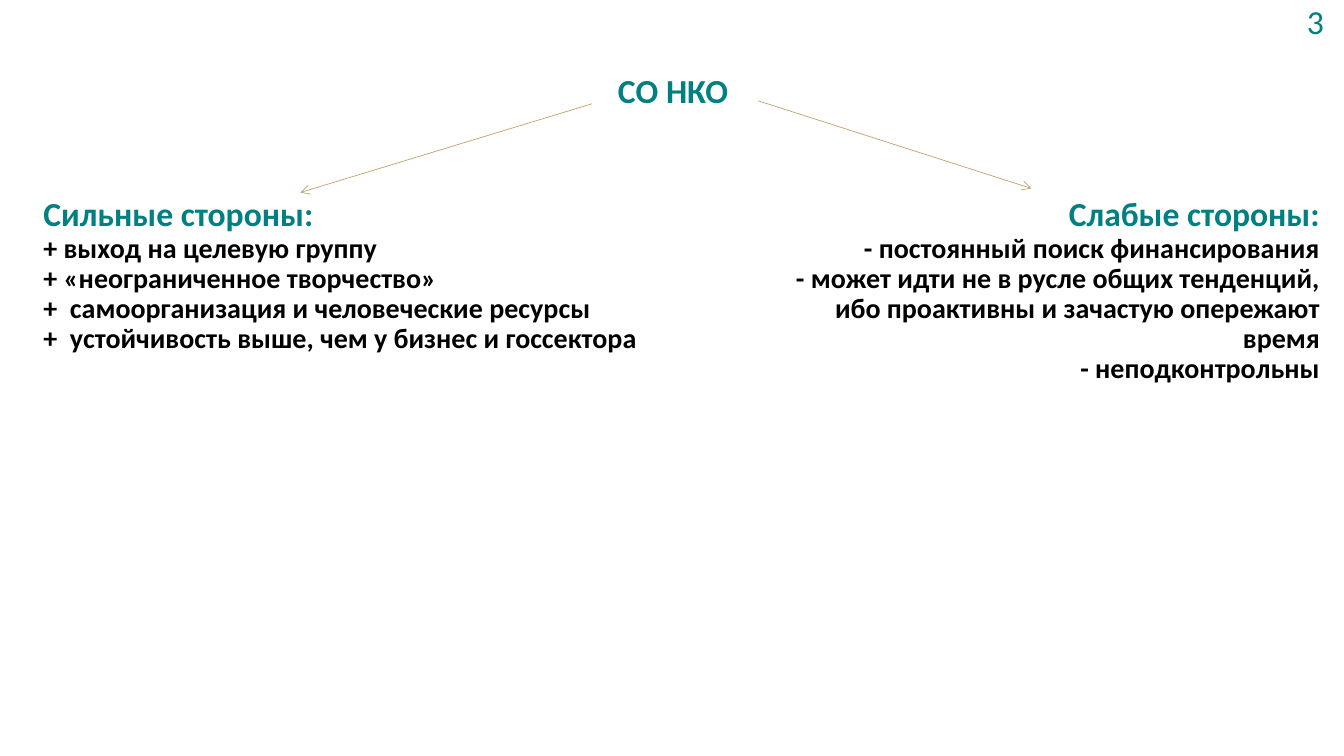
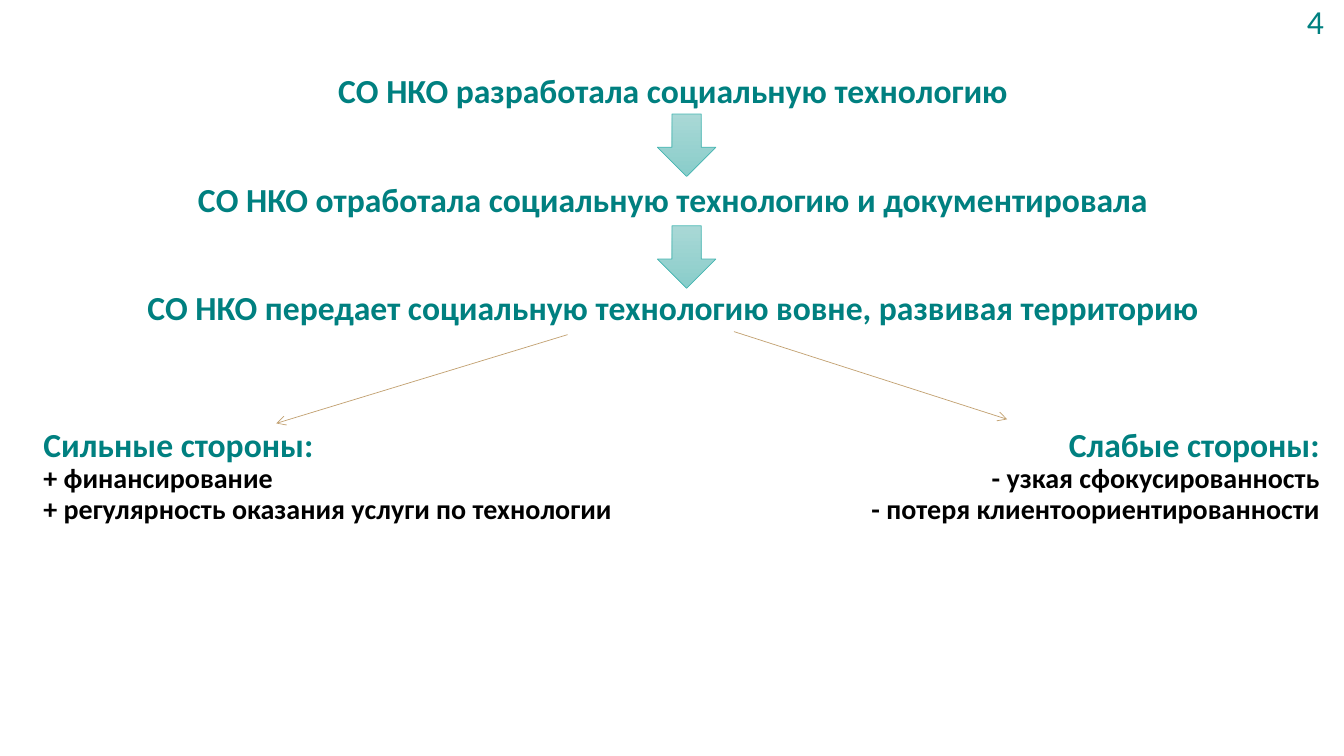
from lxml import etree
from pptx import Presentation
from pptx import util as u
from pptx.dml import color
from pptx.enum import shapes, text
from pptx.oxml import ns

LEFT, CENTER, RIGHT = text.PP_ALIGN.LEFT, text.PP_ALIGN.CENTER, text.PP_ALIGN.RIGHT


class Deck:
    COLORS = {"accent": "008080", "body": "000000", "line": "C2A171",
              "arrow_top": "A9D8D6", "arrow_bottom": "89CDCA", "arrow_line": "48B7B3"}
    FONT = "Calibri"
    HEAD, BODY = 24, 20
    STEP_GAP = 51.5

    def __init__(self):
        self.prs = Presentation()
        self.prs.slide_width = u.Inches(13.33)
        self.prs.slide_height = u.Inches(7.5)
        self.s = None

    def rgb(self, name):
        return color.RGBColor.from_string(self.COLORS[name])

    def slide(self, number):
        self.s = self.prs.slides.add_slide(self.prs.slide_layouts[3])
        sp = self.s.shapes.add_textbox(0, 0, 0, 0)
        tf = self.frame(sp, 12.75, 0, 0.59, 0.35)
        self.paragraph(tf, str(number), self.HEAD, "accent", CENTER, bold=False)

    def frame(self, sp, x, y, w, h):
        sp.left, sp.top, sp.width, sp.height = map(u.Inches, (x, y, w, h))
        tf = sp.text_frame
        tf.word_wrap = True
        tf.auto_size = text.MSO_AUTO_SIZE.NONE
        tf.vertical_anchor = text.MSO_ANCHOR.TOP
        return tf

    def paragraph(self, tf, words, size, ink, align, bold=True, before=0):
        p = tf.paragraphs[0] if not tf.text else tf.add_paragraph()
        p.alignment = align
        p.line_spacing = 0.9
        p.space_before = u.Pt(before)
        p.space_after = u.Pt(0)
        pPr = p._p.get_or_add_pPr()
        pPr.set("marL", "0")
        pPr.set("indent", "0")
        etree.SubElement(pPr, ns.qn("a:buNone"))
        r = p.add_run()
        r.text = words
        r.font.name = self.FONT
        r.font.size = u.Pt(size)
        r.font.bold = bold
        r.font.color.rgb = self.rgb(ink)

    def title(self, *steps):
        tf = self.frame(self.s.shapes.title, 0.15, 0.69, 13.05, 1.01)
        for i, step in enumerate(steps):
            self.paragraph(tf, step, self.HEAD, "accent", CENTER,
                           before=self.STEP_GAP if i else 0)

    def column(self, index, box, heading, items, align):
        tf = self.frame(self.s.placeholders[index], *box)
        self.paragraph(tf, heading, self.HEAD, "accent", align)
        for item in items:
            self.paragraph(tf, item, self.BODY, "body", align)

    def line_arrow(self, x1, y1, x2, y2):
        sp = self.s.shapes.add_connector(
            shapes.MSO_CONNECTOR.STRAIGHT, *map(u.Inches, (x1, y1, x2, y2)))
        sp.line.color.rgb = self.rgb("line")
        sp.line.width = u.Pt(0.5)
        spPr = sp.element.spPr
        etree.SubElement(spPr.find(ns.qn("a:ln")), ns.qn("a:tailEnd"), type="arrow")
        etree.SubElement(spPr, ns.qn("a:effectLst"))

    def down_arrow(self, y):
        sp = self.s.shapes.add_shape(
            shapes.MSO_SHAPE.DOWN_ARROW, *map(u.Inches, (6.52, y, 0.58, 0.62)))
        sp.shadow.inherit = False
        sp.fill.gradient()
        sp.fill.gradient_angle = 270
        for stop, name in zip(sp.fill.gradient_stops, ("arrow_top", "arrow_bottom")):
            stop.color.rgb = self.rgb(name)
        sp.line.color.rgb = self.rgb("arrow_line")
        sp.line.width = u.Pt(0.5)

    def comparison(self, x, y, strengths, weaknesses):
        self.line_arrow(x, y + 0.03, x - 2.89, y + 0.91)
        self.line_arrow(x + 1.65, y, x + 4.36, y + 0.87)
        top = y + 0.91
        self.column(1, (0.33, top, 7.18, 3.31), "Сильные стороны:", strengths, LEFT)
        self.column(2, (7.52, top, 5.67, 3.31), "Слабые стороны:", weaknesses, RIGHT)


def main():
    deck = Deck()

    deck.slide(3)
    deck.title("СО НКО")
    deck.comparison(
        5.87, 1,
        ["+ выход на целевую группу",
         "+ «неограниченное творчество»",
         "+  самоорганизация и человеческие ресурсы",
         "+  устойчивость выше, чем у бизнес и госсектора"],
        ["- постоянный поиск финансирования",
         "- может идти не в русле общих тенденций, ибо проактивны "
         "и зачастую опережают время",
         "- неподконтрольны"])

    deck.slide(4)
    deck.title("СО НКО разработала социальную технологию",
               "СО НКО отработала социальную технологию и документировала",
               "СО НКО передает социальную технологию вовне, развивая территорию")
    for y in (1.13, 2.24):
        deck.down_arrow(y)
    deck.comparison(
        5.63, 3.29,
        ["+ финансирование",
         "+ регулярность оказания услуги по технологии"],
        ["- узкая сфокусированность",
         "- потеря клиентоориентированности"])

    deck.prs.save("out.pptx")


if __name__ == "__main__":
    main()
